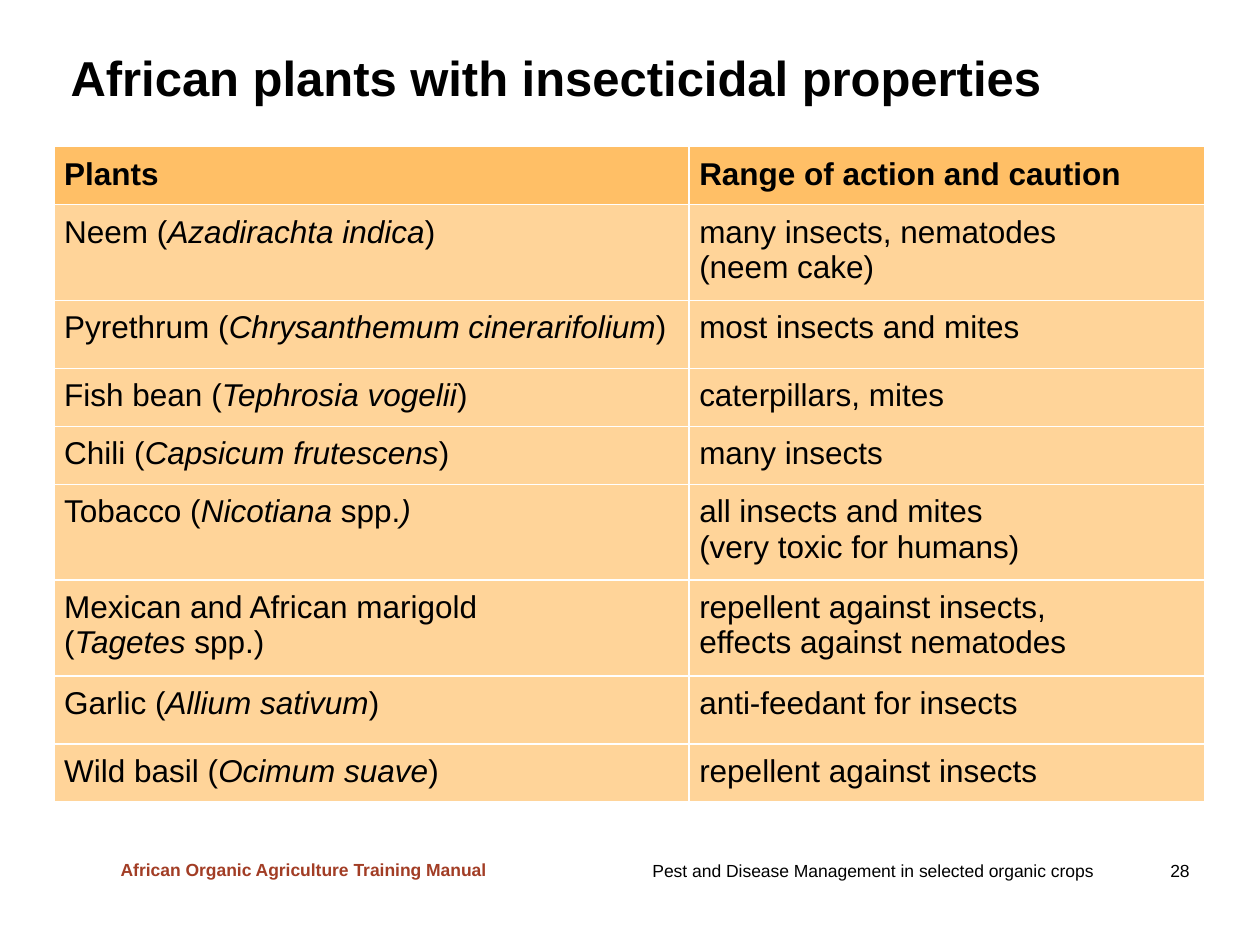
import pptx
import pptx.dml.color
import pptx.enum.text
import pptx.oxml
import pptx.oxml.ns
import pptx.util

ANCHOR = pptx.enum.text.MSO_ANCHOR
NS = pptx.oxml.ns.nsdecls("a")


def colour(hex_text):
    return pptx.dml.color.RGBColor.from_string(hex_text)


def write(frame, text, size=18, ink="000000", bold=False, insets=(0.08,) * 4,
          anchor=ANCHOR.TOP, wrap=True, tab=None):
    """Fill a text frame; *asterisks* mark italics, a newline breaks the line."""
    (frame.margin_left, frame.margin_top, frame.margin_right,
     frame.margin_bottom) = [pptx.util.Inches(inset) for inset in insets]
    frame.vertical_anchor = anchor
    frame.word_wrap = wrap
    paragraph = frame.paragraphs[0]
    if tab:
        paragraph._p.get_or_add_pPr().append(pptx.oxml.parse_xml(
            f'<a:tabLst {NS}><a:tab pos="{tab}" algn="l"/></a:tabLst>'))
    for part, piece in enumerate(text.split("*")):
        for line, words in enumerate(piece.split("\n")):
            if line:
                paragraph.add_line_break()
            if words:
                run = paragraph.add_run()
                run.text = words
                run.font.italic = part % 2 == 1
    paragraph.font.size = pptx.util.Pt(size)
    for run in paragraph.runs:
        run.font.name = "Arial"
        run.font.size = pptx.util.Pt(size)
        run.font.bold = bold
        run.font.color.rgb = colour(ink)


deck = pptx.Presentation()
W = deck.slide_width = pptx.util.Inches(10)
H = deck.slide_height = pptx.util.Inches(7.5)
slide = deck.slides.add_slide(deck.slide_layouts[6])

# Title and footers: left, top, width, height as shares of the slide
footer = dict(size=10, insets=(0.1, 0.05, 0.1, 0.05))
for text, (left, top, width, height), look in [
    ("African plants with insecticidal properties", (0.056, 0.048, 0.902, 0.073),
     dict(size=28, bold=True, insets=(0, 0, 0.1, 0.05), anchor=ANCHOR.MIDDLE)),
    ("African Organic Agriculture Training Manual", (0.086, 0.903, 0.314, 0.036),
     dict(footer, ink="A23D25", bold=True, wrap=False)),
    ("Pest and Disease Management in selected organic crops\t28",
     (0.508, 0.903, 0.484, 0.036),
     dict(footer, anchor=ANCHOR.MIDDLE, tab=int(W * 0.411))),
]:
    box = slide.shapes.add_textbox(int(W * left), int(H * top),
                                   int(W * width), int(H * height))
    write(box.text_frame, text, **look)

# Table of plants: row heights as shares of the slide's height
single, roomy, double = 0.061, 0.072, 0.101
plants = [
    ("Plants", "Range of action and caution", single),
    ("Neem (*Azadirachta indica*)", "many insects, nematodes \n(neem cake)", double),
    ("Pyrethrum (*Chrysanthemum cinerarifolium*)", "most insects and mites", roomy),
    ("Fish bean (*Tephrosia vogelii*)", "caterpillars, mites", single),
    ("Chili (*Capsicum frutescens*)", "many insects", single),
    ("Tobacco (*Nicotiana *spp.*)*", "all insects and mites \n(very toxic for humans)",
     double),
    ("Mexican and African marigold \n(*Tagetes *spp.)",
     "repellent against insects, \neffects against nematodes", double),
    ("Garlic (*Allium sativum*)", "anti-feedant for insects", roomy),
    ("Wild basil (*Ocimum suave*)", "repellent against insects", single),
]
column_shares = (0.504, 0.409)
table = slide.shapes.add_table(
    len(plants), len(column_shares), int(W * 0.043), int(H * 0.155),
    int(W * sum(column_shares)), int(H * sum(row[2] for row in plants))).table
for column, share in zip(table.columns, column_shares):
    column.width = int(W * share)

for r, (plant, action, share) in enumerate(plants):
    table.rows[r].height = int(H * share)
    for c, text in enumerate((plant, action)):
        cell = table.cell(r, c)
        # White rules on all four sides
        for side in ("lnL", "lnR", "lnT", "lnB"):
            cell._tc.get_or_add_tcPr().append(pptx.oxml.parse_xml(
                f'<a:{side} {NS} w="12700"><a:solidFill>'
                f'<a:srgbClr val="FFFFFF"/></a:solidFill></a:{side}>'))
        cell.fill.solid()
        cell.fill.fore_color.rgb = colour("FFD499" if r else "FFBF66")
        cell.margin_left = cell.margin_right = pptx.util.Inches(0.08)
        cell.margin_top = cell.margin_bottom = pptx.util.Inches(0.08)
        write(cell.text_frame, text, bold=r == 0)

deck.save("out.pptx")
